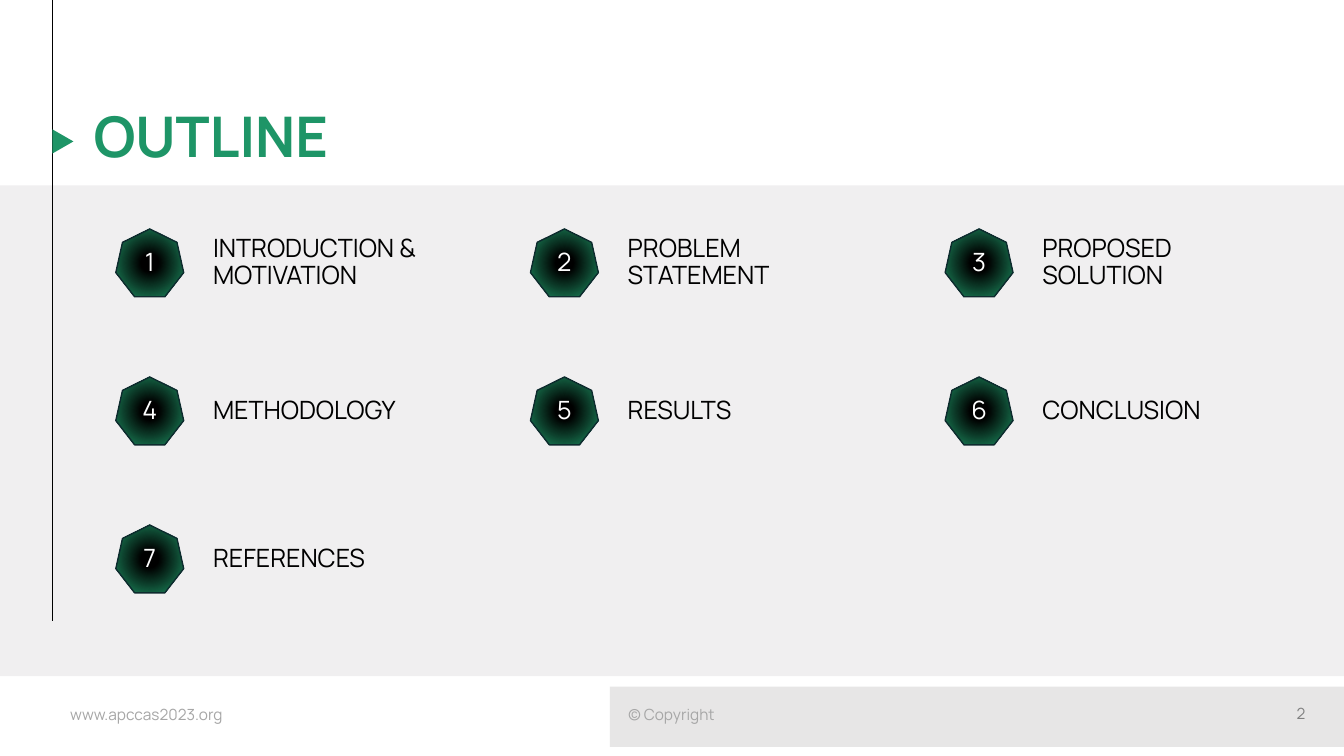
from lxml.etree import SubElement
from pptx import Presentation
from pptx.dml.color import RGBColor
from pptx.enum.shapes import MSO_CONNECTOR, MSO_SHAPE
from pptx.enum.text import MSO_ANCHOR, PP_ALIGN
from pptx.oxml.ns import qn
from pptx.util import Cm, Pt

FONT = "Manrope"
GREEN = "1E9567"
BLACK = "000000"
FOOTER_GREY = "A6A6A6"
COLUMNS = 3
BADGE_SIZE = 1.71
BADGE_LEFT, BADGE_TOP = 2.92, 5.77
COLUMN_STEP, ROW_STEP = 10.45, 3.73
LABEL_WIDTH = 6.5
TOPICS = [
    "INTRODUCTION &\nMOTIVATION",
    "PROBLEM\nSTATEMENT",
    "PROPOSED\vSOLUTION",
    "METHODOLOGY",
    "RESULTS",
    "CONCLUSION",
    "REFERENCES",
]


def color(value):
    return RGBColor.from_string(value)


def write(shape, text, size, text_color, align=PP_ALIGN.LEFT, bold=False, spacing=None):
    frame = shape.text_frame
    frame.text = text
    frame.vertical_anchor = MSO_ANCHOR.MIDDLE
    for paragraph in frame.paragraphs:
        paragraph.alignment = align
        paragraph.line_spacing = spacing
        paragraph.font.name = FONT
        paragraph.font.size = Pt(size)
        paragraph.font.bold = bold
        paragraph.font.color.rgb = color(text_color)


def add_text(slide, left, top, width, height, text, size, text_color, wrap=True, **style):
    box = slide.shapes.add_textbox(Cm(left), Cm(top), Cm(width), Cm(height))
    box.text_frame.word_wrap = wrap
    write(box, text, size, text_color, **style)
    return box


def add_block(slide, kind, left, top, width, height, fill):
    shape = slide.shapes.add_shape(kind, Cm(left), Cm(top), Cm(width), Cm(height))
    shape.shadow.inherit = False
    shape.fill.solid()
    shape.fill.fore_color.rgb = color(fill)
    shape.line.fill.background()
    return shape


def set_opacity(shape, percent):
    solid = shape.fill._xPr.find(qn("a:solidFill"))
    SubElement(solid[0], qn("a:alpha"), val=str(percent * 1000))


def set_radial_fill(shape, stops):
    shape.fill.gradient()
    for stop, (position, value) in zip(shape.fill.gradient_stops, stops):
        stop.position = position
        stop.color.rgb = color(value)
    gradient = shape.fill._xPr.find(qn("a:gradFill"))
    gradient.remove(gradient.find(qn("a:lin")))
    circle = SubElement(gradient, qn("a:path"), path="circle")
    sides = {side: "50000" for side in "ltrb"}
    SubElement(circle, qn("a:fillToRect"), **sides)


def add_rule(slide, left, top, bottom):
    rule = slide.shapes.add_connector(
        MSO_CONNECTOR.STRAIGHT, Cm(left), Cm(top), Cm(left), Cm(bottom))
    rule.line.color.rgb = color(BLACK)
    rule.line.width = Pt(0.75)
    SubElement(rule.line._get_or_add_ln().getparent(), qn("a:effectLst"))


def add_badge(slide, left, top, number):
    badge = add_block(slide, MSO_SHAPE.HEPTAGON, left, top, BADGE_SIZE, BADGE_SIZE, GREEN)
    set_radial_fill(badge, [(0.18, BLACK), (1, GREEN)])
    badge.line.color.rgb = color("0E2B2E")
    badge.line.width = Pt(1)
    frame = badge.text_frame
    frame.margin_left = frame.margin_right = frame.margin_top = frame.margin_bottom = 0
    write(badge, str(number), 18, "FFFFFF", align=PP_ALIGN.CENTER, spacing=0.9)


def add_topic(slide, index, topic):
    row, column = divmod(index, COLUMNS)
    left = BADGE_LEFT + column * COLUMN_STEP
    top = BADGE_TOP + row * ROW_STEP
    add_badge(slide, left, top, index + 1)
    label = add_text(slide, left + BADGE_SIZE, top, LABEL_WIDTH, BADGE_SIZE,
                     topic, 18, BLACK, spacing=0.9)
    label.text_frame.margin_left = Cm(0.74)


def add_background(slide):
    add_block(slide, MSO_SHAPE.RECTANGLE, 15.37, 17.3, 18.5, 1.52, "E7E6E6")
    band = add_block(slide, MSO_SHAPE.RECTANGLE, 0, 4.67, 33.87, 12.37, "C5C3C4")
    set_opacity(band, 25)
    add_rule(slide, 1.32, 0, 15.65)
    marker = add_block(slide, MSO_SHAPE.ISOSCELES_TRIANGLE, 1.28, 3.3, 0.61, 0.53, GREEN)
    marker.rotation = 90


def add_footer(slide):
    add_text(slide, 1.52, 17.63, 4.7, 0.74, "www.apccas2023.org", 11, FOOTER_GREY, wrap=False)
    add_text(slide, 8.43, 17.63, 16.99, 0.74, "© Copyright", 11, FOOTER_GREY,
             align=PP_ALIGN.CENTER)
    add_text(slide, 31.7, 17.55, 1.45, 0.86, "2", 11, "808080", align=PP_ALIGN.RIGHT)


def main():
    presentation = Presentation()
    presentation.slide_width = Cm(33.87)
    presentation.slide_height = Cm(19.05)
    slide = presentation.slides.add_slide(presentation.slide_layouts[6])
    add_background(slide)
    add_footer(slide)
    add_text(slide, 2.11, 2.54, 19.3, 1.96, "OUTLINE", 40, GREEN, bold=True, spacing=0.9)
    for index, topic in enumerate(TOPICS):
        add_topic(slide, index, topic)
    presentation.save("out.pptx")


if __name__ == "__main__":
    main()
